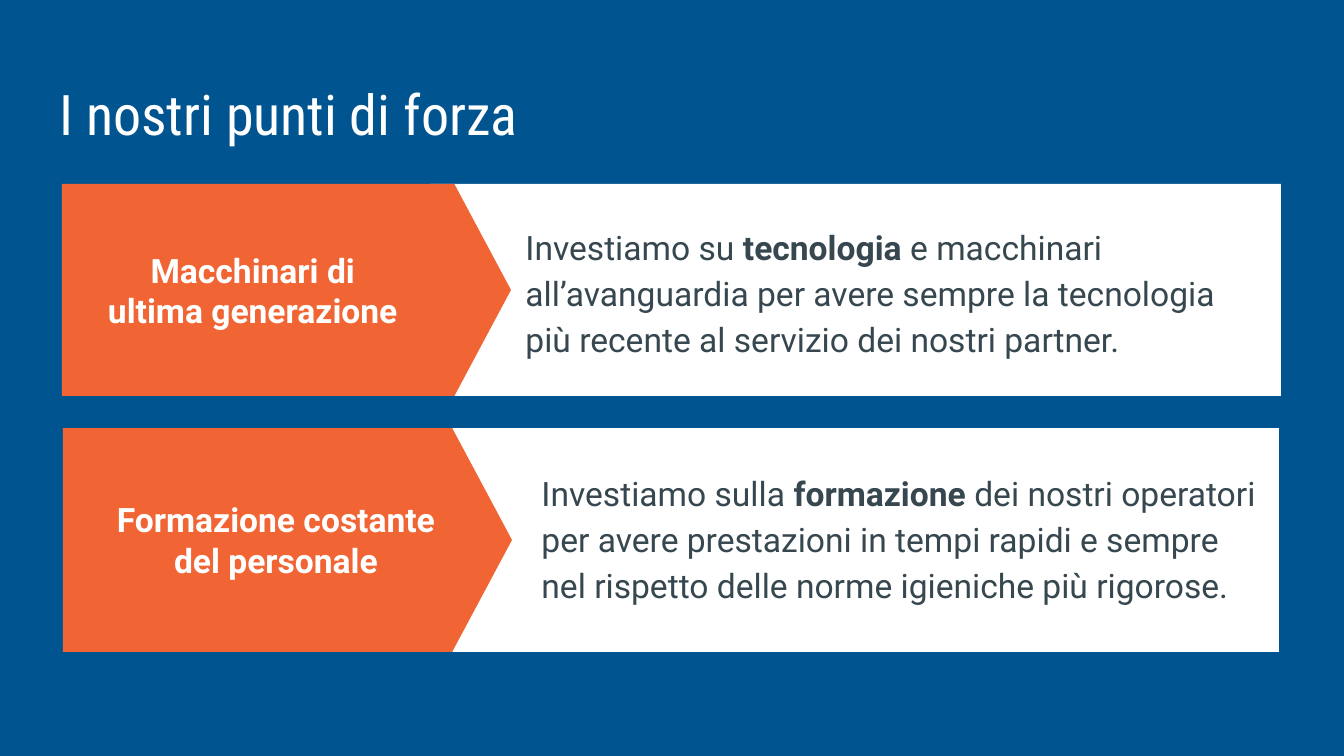
"""Build the slide on company strengths: two arrow labels with their details."""
import dataclasses

import pptx
import pptx.dml.color
import pptx.enum.shapes
import pptx.enum.text
import pptx.util
from pptx.oxml.xmlchemy import OxmlElement

EMU_PER_PX = 914400 / 134.4


@dataclasses.dataclass(frozen=True)
class Theme:
    """Colours, fonts and type sizes."""

    background: str = "005490"
    light: str = "FFFFFF"
    accent: str = "F16535"
    ink: str = "37474F"
    title_font: str = "Roboto Condensed"
    body_font: str = "Roboto"
    title_size: int = 30
    body_size: int = 18


def px(length):
    """Turn px into EMU."""
    return pptx.util.Emu(round(length * EMU_PER_PX))


def rgb(colour):
    """Turn a hex string into a colour."""
    return pptx.dml.color.RGBColor.from_string(colour)


class StrengthsSlide:
    """Hold the theme and the current slide, and draw its elements."""

    def __init__(self, deck, theme):
        """Add a page with a title and four text placeholders."""
        self.theme = theme
        self.page = deck.slides.add_slide(deck.slide_layouts.get_by_name("Comparison"))
        self.page.background.fill.solid()
        self.page.background.fill.fore_color.rgb = rgb(theme.background)

    def text(self, index, area, paragraphs, font, size, colour, align, anchor, spacing=1.0, bold=False):
        """Fill a placeholder; every second span of a paragraph is emphasised."""
        box = self.page.placeholders[index]
        box.left, box.top, box.width, box.height = map(px, area)
        self.page.shapes._spTree.append(box._element)
        frame = box.text_frame
        frame.word_wrap = True
        frame.auto_size = pptx.enum.text.MSO_AUTO_SIZE.NONE
        frame.vertical_anchor = anchor
        frame.margin_left = frame.margin_right = pptx.util.Inches(0.1)
        frame.margin_top = frame.margin_bottom = pptx.util.Inches(0.1)
        for number, spans in enumerate(paragraphs):
            para = frame.add_paragraph() if number else frame.paragraphs[0]
            para.alignment = align
            para.line_spacing = spacing
            para.space_before = para.space_after = pptx.util.Pt(0)
            properties = para._p.get_or_add_pPr()
            properties.set("marL", "0")
            properties.set("indent", "0")
            properties.append(OxmlElement("a:buNone"))
            para.font.name = font
            para.font.size = pptx.util.Pt(size)
            para.font.color.rgb = rgb(colour)
            para.font.bold = bold
            for position, words in enumerate(spans):
                span = para.add_run()
                span.text = words
                span.font.name = font
                span.font.size = pptx.util.Pt(size)
                span.font.color.rgb = rgb(colour)
                span.font.bold = bold or position % 2 == 1

    def title(self, area, words):
        """Write the slide title."""
        self.text(0, area, [[words]], self.theme.title_font, self.theme.title_size, self.theme.light,
                  pptx.enum.text.PP_ALIGN.LEFT, pptx.enum.text.MSO_ANCHOR.TOP)

    def label(self, index, area, lines):
        """Write the bold centred words on an arrow."""
        self.text(index, area, [[line] for line in lines], self.theme.body_font, self.theme.body_size,
                  self.theme.light, pptx.enum.text.PP_ALIGN.CENTER, pptx.enum.text.MSO_ANCHOR.MIDDLE,
                  bold=True)

    def detail(self, index, area, spans):
        """Write the explanation beside an arrow."""
        self.text(index, area, [spans], self.theme.body_font, self.theme.body_size, self.theme.ink,
                  pptx.enum.text.PP_ALIGN.LEFT, pptx.enum.text.MSO_ANCHOR.MIDDLE, spacing=1.15)

    def shape(self, group, kind, area, colour):
        """Add a plain filled shape to a group."""
        shape = group.shapes.add_shape(kind, *map(px, area))
        shape.shadow.inherit = False
        shape.fill.solid()
        shape.fill.fore_color.rgb = rgb(colour)
        shape.line.fill.background()
        return shape

    def band(self, top, height, arrow_left, right):
        """Draw a white panel with an orange arrow over its left end."""
        group = self.page.shapes.add_group_shape()
        kinds = pptx.enum.shapes.MSO_SHAPE
        self.shape(group, kinds.RECTANGLE, (430, top, right - 430, height), self.theme.light)
        arrow = self.shape(group, kinds.PENTAGON, (arrow_left, top, 449, height), self.theme.accent)
        arrow.adjustments[0] = 0.267


def main():
    """Build and save the deck."""
    deck = pptx.Presentation()
    deck.slide_width, deck.slide_height = px(1344), px(756)
    slide = StrengthsSlide(deck, Theme())
    slide.title((46, 66, 1253, 85), "I nostri punti di forza")

    slide.band(184, 212, 62, 1281)
    slide.label(1, (79, 184, 356, 212), ["Macchinari di ", "ultima generazione "])
    slide.detail(2, (512, 184, 751, 212), [
        "Investiamo su ", "tecnologia",
        " e macchinari all’avanguardia per avere sempre la tecnologia"
        " più recente al servizio dei nostri partner."])

    slide.band(428, 224, 63, 1279)
    slide.label(3, (98, 481, 356, 117), ["Formazione costante del personale"])
    slide.detail(4, (528, 454, 751, 164), [
        "Investiamo sulla ", "formazione",
        " dei nostri operatori per avere prestazioni in tempi rapidi e sempre"
        " nel rispetto delle norme igieniche più rigorose."])
    deck.save("out.pptx")


if __name__ == "__main__":
    main()
